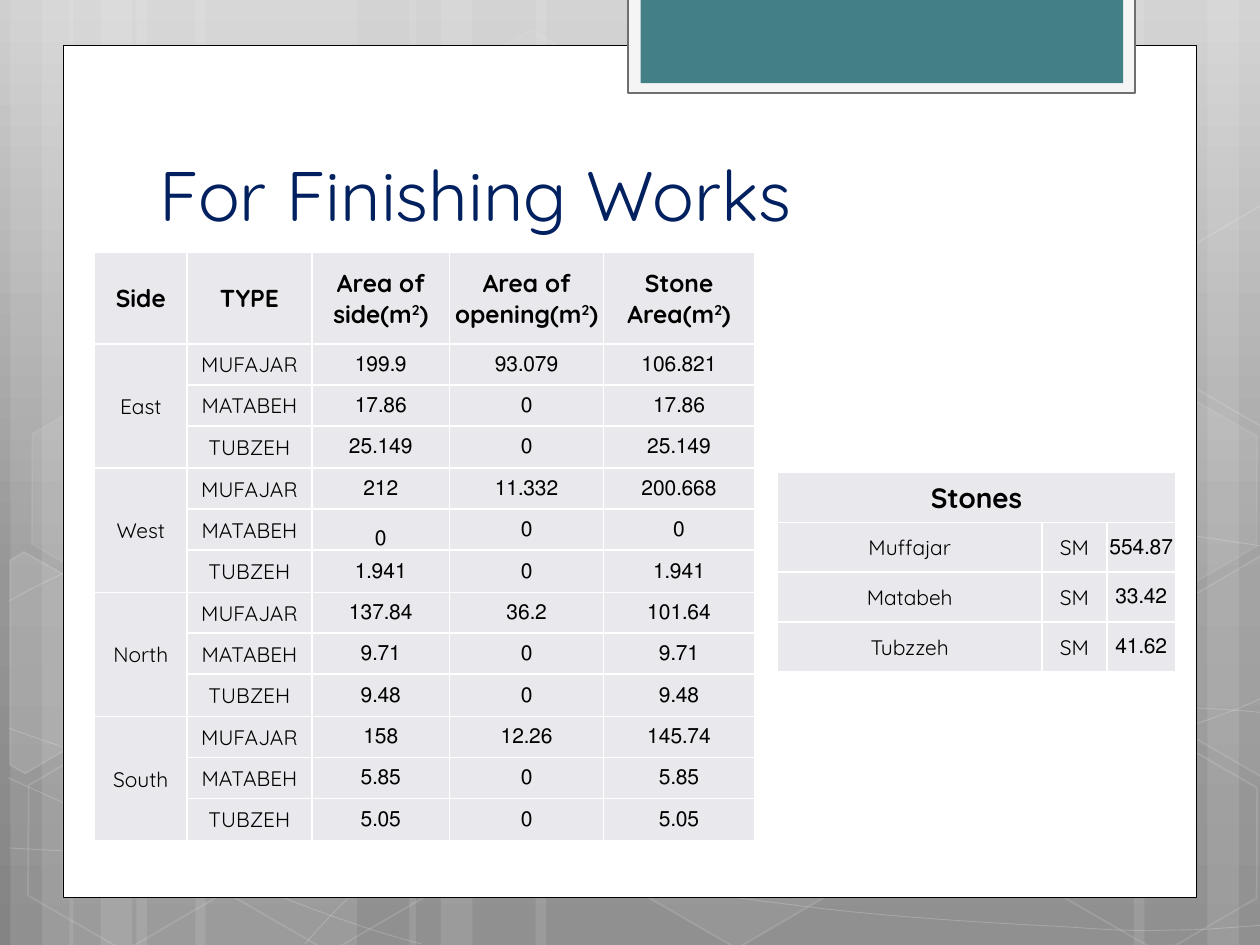
from copy import deepcopy

from lxml.etree import SubElement
from pptx import Presentation
from pptx.dml.color import RGBColor
from pptx.enum.shapes import MSO_SHAPE as Preset
from pptx.enum.text import MSO_ANCHOR as Anchor, PP_ALIGN as Align
from pptx.oxml.ns import qn
from pptx.util import Inches, Pt

CELL = Inches(0.1)  # the slide is a grid of 100 columns by 75 rows
COLUMNS, ROWS = 100, 75
FONT = "Quicksand"
COLORS = {"white": "FFFFFF", "black": "000000", "title": "002060", "table": "E9E9ED",
          "tab": "438086", "tab frame": "F5F5F5", "tab edge": "6F6F6F"}
BACKDROP = [(0, "CFCFCF"), (0.62, "969696"), (1, "848484")]

# left column, width
BARS = [(10.83, 17.5), (0.83, 5), (3.33, 8.33), (15.5, 17.5), (5.5, 5), (8, 8.33),
        (73.33, 17.5), (95.83, 5), (90, 8.33), (42.5, 30.83), (32.5, 5), (35, 8.33)]
# start point, then two controls and an end point for each Bézier piece
CURVES = [
    [(0.7, 67.3), (6.1, 67.6), (11.5, 67.9), (19, 67.8), (26.5, 67.7), (35.8, 67.5), (45.8, 66.5),
     (55.8, 65.5), (70, 63.6), (79.2, 61.7), (88.3, 59.8), (97.7, 56.8), (100.7, 55.1)],
    [(0.7, 47.7), (3.6, 46.1), (6.5, 44.6), (12.1, 43.1), (17.8, 41.6), (25.9, 39.4), (34.7, 38.7),
     (43.6, 38), (54.4, 37.9), (65.4, 38.7), (76.4, 39.5), (94.7, 42.6), (100.7, 43.4)],
    [(0.6, 61.7), (12.7, 67.2), (24.7, 72.7), (33.4, 74.9)],
    [(0.7, 57.8), (3.8, 58.9), (7, 60), (12.8, 61.6), (18.6, 63.1), (27.3, 65.6), (35.7, 67.3),
     (44, 69), (54.5, 70.8), (62.8, 71.8), (71.1, 72.9), (80, 73.3), (85.3, 73.6),
     (90.5, 74), (91.9, 73.8), (94.5, 73.8), (97.1, 73.7), (98.9, 73.5), (100.7, 73.4)],
    [(24.2, 74.9), (26, 72.9), (27.8, 70.9), (30.2, 69.1), (32.6, 67.3), (36, 65.3), (38.8, 63.9),
     (41.6, 62.5), (43.3, 61.9), (47, 60.9), (50.6, 59.9), (57.3, 58.5), (60.8, 57.8),
     (64.4, 57.1), (64.9, 57.1), (68, 56.9), (71.1, 56.6), (76, 56.3), (79.4, 56.2),
     (82.9, 56.1), (88.6, 56.2), (88.6, 56.2), (90.9, 56.2), (93.2, 56.2), (95.3, 56.2),
     (97.1, 56.3), (98.8, 56.4), (100.6, 56.6)],
]
# left column, top row, fill opacity, line opacity (percent)
HEXAGONS = [(33.4, 3.6, 4, 8), (49.7, 58.9, 6, 12), (1.1, 59.1, 0, 12), (1.4, 31.2, 7, 8),
            (17.4, 59.2, 0, 12), (75.3, 45.3, 10, 12), (83.4, 59.3, 0, 12), (83.4, 31.4, 7, 8)]
# outline of a hexagon cut by the slide's edge, fill opacity
CUT_HEXAGONS = [
    ([(0.8, 44.5), (1.9, 43.8), (9.6, 48.2), (9.5, 57), (2, 61.4), (0.8, 60.7)], 10),
    ([(92.6, 48.5), (100.1, 44.1), (100.9, 44.6), (100.9, 61.3), (100.2, 61.7), (92.6, 57.3)], 4),
    ([(92.6, 20.7), (100.1, 16.3), (101, 16.8), (100.9, 33.5), (100.2, 33.9), (92.6, 29.5)], 0),
]

STONE_TYPES = ["MUFAJAR", "MATABEH", "TUBZEH"]
# area of the side and of its openings, for each stone type
SIDES = {"East": [(199.9, 93.079), (17.86, 0), (25.149, 0)],
         "West": [(212, 11.332), (0, 0), (1.941, 0)],
         "North": [(137.84, 36.2), (9.71, 0), (9.48, 0)],
         "South": [(158, 12.26), (5.85, 0), (5.05, 0)]}
TOTALS = [("Muffajar", "SM", "554.87"), ("Matabeh", "SM", "33.42"), ("Tubzzeh", "SM", "41.62")]


def grid(*cells):
    return [round(CELL * cell) for cell in cells]


def rgb(name):
    return RGBColor.from_string(COLORS[name])


def set_opacity(properties, percent):
    if percent < 100:
        color = properties.find(qn("a:solidFill"))[0]
        SubElement(color, qn("a:alpha"), val=str(percent * 1000))


def style(shape, fill=None, fill_opacity=100, line=None, width=1, line_opacity=100):
    shape.shadow.inherit = False
    properties = shape.element.spPr
    if fill and fill_opacity:
        shape.fill.solid()
        shape.fill.fore_color.rgb = rgb(fill)
        set_opacity(properties, fill_opacity)
    else:
        shape.fill.background()
    if line:
        shape.line.color.rgb = rgb(line)
        shape.line.width = Pt(width)
        set_opacity(properties.find(qn("a:ln")), line_opacity)
    else:
        shape.line.fill.background()


def add_preset(slide, preset, box, **look):
    shape = slide.shapes.add_shape(preset, *grid(*box))
    style(shape, **look)
    return shape


def add_outline(slide, points, close, **look):
    start, *rest = [grid(*point) for point in points]
    builder = slide.shapes.build_freeform(*start, scale=1.0)
    builder.add_line_segments(rest, close=close)
    outline = builder.convert_to_shape()
    style(outline, **look)
    return outline


def bend(outline):
    """Turn each three straight segments into one Bézier piece."""
    track = next(outline.element.iter(qn("a:path")))
    segments = track.findall(qn("a:lnTo"))
    for first in range(0, len(segments), 3):
        piece = SubElement(track, qn("a:cubicBezTo"))
        for segment in segments[first:first + 3]:
            piece.append(segment[0])
            track.remove(segment)


def paint_backdrop(slide):
    fill = slide.background.fill
    fill.gradient()
    fill.gradient_angle = 270
    stops = next(slide.element.iter(qn("a:gsLst")))
    stops.insert(0, deepcopy(stops[0]))
    for stop, (position, color) in zip(fill.gradient_stops, BACKDROP):
        stop.position = position
        stop.color.rgb = RGBColor.from_string(color)


def draw_decoration(slide):
    for left, width in BARS:
        add_preset(slide, Preset.RECTANGLE, (left, 0, width, ROWS), fill="white", fill_opacity=10)
    for curve in CURVES:
        bend(add_outline(slide, curve, False, line="white", width=0.5, line_opacity=20))
    for left, top, fill_opacity, line_opacity in HEXAGONS:
        hexagon = add_preset(slide, Preset.HEXAGON, (left, top, 17.5, 15.2), fill="white",
                             fill_opacity=fill_opacity, line="white", line_opacity=line_opacity)
        hexagon.adjustments[0] = 0.285
        hexagon.rotation = 30
    for outline, opacity in CUT_HEXAGONS:
        add_outline(slide, outline, True, fill="white", fill_opacity=opacity,
                    line="white", line_opacity=12)


def set_font(paragraph, size, color, bold=False):
    font = paragraph.font
    font.name, font.size, font.bold = FONT, Pt(size), bold
    font.color.rgb = rgb(color)


def add_title(slide, text):
    frame = slide.shapes.add_textbox(*grid(11.7, 6.7, 76.8, 12.5)).text_frame
    frame.word_wrap = True
    frame.vertical_anchor = Anchor.BOTTOM
    frame.text = text
    set_font(frame.paragraphs[0], 40, "title")


def fill_cell(cell, text, size, bold):
    """Write text right-to-left, raising the 2 of each m²."""
    cell.margin_left = cell.margin_right = cell.margin_top = Inches(0.01)
    cell.margin_bottom = 0
    cell.vertical_anchor = Anchor.MIDDLE
    cell.fill.solid()
    cell.fill.fore_color.rgb = rgb("table")
    borders = cell._tc.get_or_add_tcPr()
    for index, side in enumerate(("a:lnL", "a:lnR", "a:lnT", "a:lnB")):
        border = SubElement(borders, qn(side), w=str(Pt(1)))
        SubElement(SubElement(border, qn("a:solidFill")), qn("a:srgbClr"), val=COLORS["white"])
        borders.insert(index, border)
    if not text:
        return
    paragraph = cell.text_frame.paragraphs[0]
    paragraph.alignment = Align.CENTER
    set_font(paragraph, size, "black", bold)
    paragraph._p.get_or_add_pPr().set("rtl", "1")
    before, raised, after = text.partition("²")
    for part in filter(None, (before, raised and "2", after)):
        run = paragraph.add_run()
        run.text = part
        if raised and part == "2":
            run.font._element.set("baseline", "30000")


def add_grid_table(slide, left, top, widths, heights, rows, head_size):
    box = grid(left, top, sum(widths), sum(heights))
    table = slide.shapes.add_table(len(rows), len(widths), *box).table
    table.first_row = table.horz_banding = False
    for column, width in zip(table.columns, grid(*widths)):
        column.width = width
    for row, height in zip(table.rows, grid(*heights)):
        row.height = height
    for r, texts in enumerate(rows):
        for c, text in enumerate(texts):
            fill_cell(table.cell(r, c), text, 12 if r else head_size, r == 0)
    return table


def add_sides_table(slide):
    rows = [["Side", "TYPE", "Area of side(m²)", "Area of opening(m²)", "Stone Area(m²)"]]
    for name, areas in SIDES.items():
        for index, (stone, (side, opening)) in enumerate(zip(STONE_TYPES, areas)):
            numbers = [f"{number:g}" for number in (side, opening, side - opening)]
            rows.append(["" if index else name, stone, *numbers])
    table = add_grid_table(slide, 7.5, 20, [7.35, 9.9, 10.95, 12.2, 12],
                           [7.3] + [3.25, 3.25, 3.36] * len(SIDES), rows, 14)
    for first in range(1, len(rows), len(STONE_TYPES)):
        table.cell(first, 0).merge(table.cell(first + len(STONE_TYPES) - 1, 0))
    table.cell(5, 2).vertical_anchor = Anchor.BOTTOM


def add_totals_table(slide):
    table = add_grid_table(slide, 61.7, 37.5, [21, 5.15, 5.45], [3.95] * 4,
                           [("Stones", "", ""), *TOTALS], 16)
    table.cell(0, 0).merge(table.cell(0, 2))


def main():
    deck = Presentation()
    deck.slide_width, deck.slide_height = grid(COLUMNS, ROWS)
    slide = deck.slides.add_slide(deck.slide_layouts[6])
    paint_backdrop(slide)
    draw_decoration(slide)
    add_preset(slide, Preset.RECTANGLE, (5, 3.6, 90, 67.65), fill="white", line="black", width=0.5)
    add_preset(slide, Preset.RECTANGLE, (49.85, -0.2, 40.25, 7.6), fill="tab frame",
               line="tab edge", width=1.25)
    add_preset(slide, Preset.RECTANGLE, (50.85, -0.2, 38.3, 6.8), fill="tab")
    add_title(slide, "For Finishing Works")
    add_totals_table(slide)
    add_sides_table(slide)
    deck.save("out.pptx")


if __name__ == "__main__":
    main()
